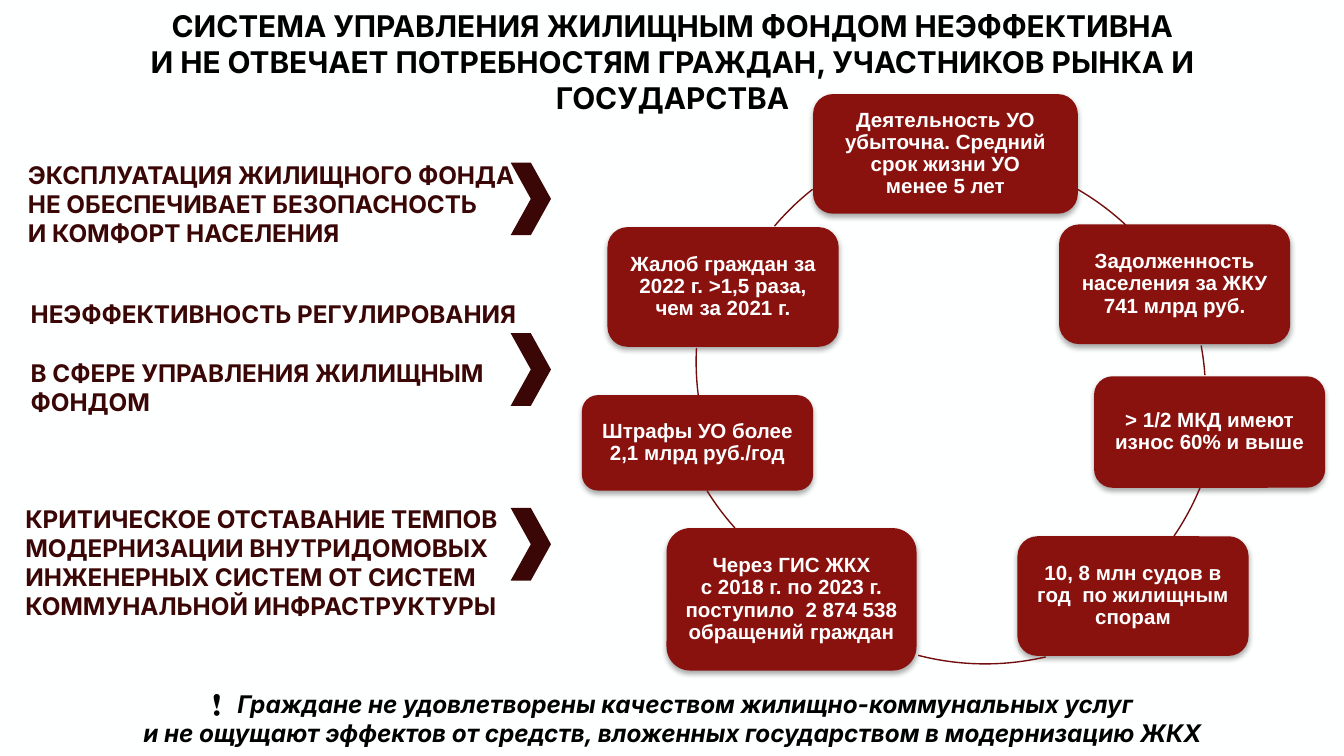
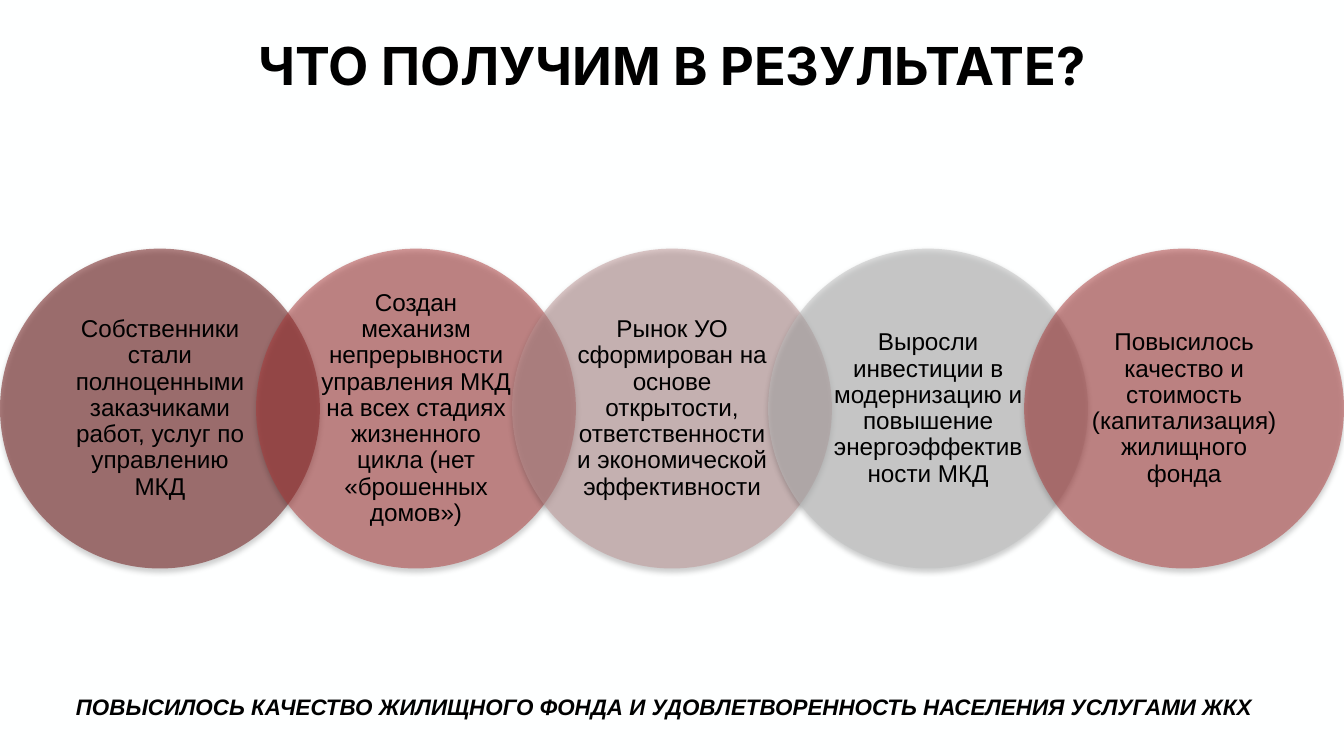
"""Build two slides on housing management: its problems and the expected results."""
from lxml.etree import SubElement
from pptx import Presentation
from pptx.dml.color import RGBColor
from pptx.enum.shapes import MSO_SHAPE
from pptx.enum.text import MSO_ANCHOR, PP_ALIGN
from pptx.oxml.ns import qn
from pptx.util import Inches, Pt

COLS, ROWS = 100, 56.25
CELL = Inches(10) / COLS
INK = {
    "back": "FEFFFF", "text": "000000", "white": "FFFFFF", "dark": "3A0606",
    "node": "89120E", "arc": "740D0D", "wine": "690C0C", "red": "AC3737",
    "rose": "BD9494", "grey": "BFBFBF",
}
ALIGN = {"l": PP_ALIGN.LEFT, "c": PP_ALIGN.CENTER}
ANCHOR = {"t": MSO_ANCHOR.TOP, "m": MSO_ANCHOR.MIDDLE, "b": MSO_ANCHOR.BOTTOM}

CLAIMS = [
    ((1.1, 10.1, 43.7, 9.3), 12.1,
     ["ЭКСПЛУАТАЦИЯ ЖИЛИЩНОГО ФОНДА\nНЕ ОБЕСПЕЧИВАЕТ БЕЗОПАСНОСТЬ\nИ КОМФОРТ НАСЕЛЕНИЯ"]),
    ((1.3, 23, 38.9, 9), 24.8,
     ["НЕЭФФЕКТИВНОСТЬ РЕГУЛИРОВАНИЯ", "В СФЕРЕ УПРАВЛЕНИЯ ЖИЛИЩНЫМ ФОНДОМ"]),
    ((0.9, 36.6, 45.9, 10.6), 37.8,
     ["КРИТИЧЕСКОЕ ОТСТАВАНИЕ ТЕМПОВ МОДЕРНИЗАЦИИ ВНУТРИДОМОВЫХ "
      "ИНЖЕНЕРНЫХ СИСТЕМ ОТ СИСТЕМ КОММУНАЛЬНОЙ ИНФРАСТРУКТУРЫ"]),
]
NODES = [
    ((60.5, 7, 19.7, 8.9), "Деятельность УО убыточна. Средний срок жизни УО\nменее 5 лет"),
    ((78.8, 16.7, 17.2, 8.9), "Задолженность населения за ЖКУ 741 млрд руб."),
    ((81.4, 28, 17.2, 8.3), "> 1/2 МКД имеют износ 60% и выше"),
    ((75.7, 39.9, 17.2, 8.9), "10, 8 млн судов в год  по жилищным спорам"),
    ((49.6, 39.3, 18.6, 10.6),
     "Через ГИС ЖКХ\nс 2018 г. по 2023 г. поступило  2 874 538 обращений граждан"),
    ((43.3, 29.4, 17.2, 7.1), "Штрафы УО более 2,1 млрд руб./год"),
    ((45.2, 16.9, 17.2, 8.9), "Жалоб граждан за 2022 г. >1,5 раза, чем за 2021 г."),
]
ARCS = [
    (50.3, 11.4, 300.2, 313), (49.9, 9.4, 349.6, 356), (51, 8.8, 22.3, 34.2),
    (53.4, 9.6, 76.9, 104.5), (49.6, 6.1, 138.1, 148.1),
    (51.8, 7, 172.8, 182.9), (52.9, 9.8, 220.3, 231.7),
]
GOALS = [
    ("wine", "Собственники стали полноценными заказчиками работ, услуг по управлению МКД"),
    ("red", "Создан механизм непрерывности управления МКД на всех стадиях "
            "жизненного цикла (нет «брошенных домов»)"),
    ("rose", "Рынок УО сформирован на основе открытости, ответственности "
             "и экономической эффективности"),
    ("grey", "Выросли инвестиции в модернизацию и повышение энергоэффективности МКД"),
    ("red", "Повысилось качество и стоимость (капитализация) жилищного фонда"),
]


def rgb(name):
    """Return the named colour."""
    return RGBColor.from_string(INK[name])


def span(*cells):
    """Turn grid cells into slide lengths."""
    return [round(n * CELL) for n in cells]


def write(shape, paras, size=13, font="Inter", ink="text", bold=True, slant=False,
          align="c", anchor="t", pad=(1, 1), lead=None, gap=0):
    """Fill a shape with formatted paragraphs; a newline is a line break."""
    frame = shape.text_frame
    frame.word_wrap = True
    frame.vertical_anchor = ANCHOR[anchor]
    side, edge = span(*pad)
    frame.margin_left = frame.margin_right = side
    frame.margin_top = frame.margin_bottom = edge
    for i, text in enumerate(paras):
        para = frame.add_paragraph() if i else frame.paragraphs[0]
        para.alignment = ALIGN[align]
        para.space_before = Pt(gap if i else 0)
        if lead:
            para.line_spacing = lead
        for j, line in enumerate(text.split("\n")):
            if j:
                para.add_line_break()
            run = para.add_run()
            run.text = line
            run.font.size, run.font.name = Pt(size), font
            run.font.bold, run.font.italic = bold, slant
            run.font.color.rgb = rgb(ink)
    return frame


def label(slide, box, paras, **form):
    """Add a text box on the grid."""
    return write(slide.shapes.add_textbox(*span(*box)), paras, **form)


def block(slide, kind, box, ink):
    """Add a plain filled shape without outline."""
    shape = slide.shapes.add_shape(kind, *span(*box))
    shape.shadow.inherit = False
    shape.fill.solid()
    shape.fill.fore_color.rgb = rgb(ink)
    shape.line.fill.background()
    return shape


def shade(shape, drop, alpha):
    """Give a shape a soft shadow below it."""
    effect = shape._element.spPr.find(qn("a:effectLst"))
    outer = SubElement(effect, qn("a:outerShdw"), blurRad=str(Pt(3.1)),
                       dist=str(Pt(drop)), dir="5400000", rotWithShape="0")
    tint = SubElement(outer, qn("a:srgbClr"), val=INK["text"])
    SubElement(tint, qn("a:alpha"), val=str(alpha * 1000))


def node(slide, box, text):
    """Add a box of the ring."""
    shape = block(slide, MSO_SHAPE.ROUNDED_RECTANGLE, box, "node")
    shade(shape, 1.8, 35)
    write(shape, [text], size=11, font="Arial", ink="white", anchor="m",
          pad=(0.5, 0.5), lead=0.9)


def arc(slide, left, top, start, end):
    """Add a link of the ring, with angles in degrees."""
    shape = slide.shapes.add_shape(MSO_SHAPE.ARC, *span(left, top, 39.8, 39.8))
    shape.shadow.inherit = False
    shape.fill.background()
    shape.line.color.rgb = rgb("arc")
    shape.line.width = Pt(0.75)
    for i, angle in enumerate((start, end)):
        shape.adjustments[i] = angle * 0.6


def disc(slide, left, top, wide, ink, text):
    """Add a half transparent circle with text over it."""
    shape = block(slide, MSO_SHAPE.OVAL, (left, top, wide, wide), ink)
    tint = shape._element.spPr.find(qn("a:solidFill"))[0]
    SubElement(tint, qn("a:alpha"), val="50000")
    shade(shape, 1.6, 38)
    inset = 3.5
    side = wide - 2 * inset
    label(slide, (left + inset, top + inset, side, side), [text], font="Arial",
          bold=False, anchor="m", pad=(1.3, 0.2), lead=0.9)


def mark(para, sign):
    """Put a bullet sign before a paragraph."""
    props = para._p.get_or_add_pPr()
    props.set("marL", str(span(1.9)[0]))
    props.set("indent", str(span(-1.9)[0]))
    tint = SubElement(props, qn("a:buClr"))
    SubElement(tint, qn("a:srgbClr"), val=INK["text"])
    SubElement(props, qn("a:buFont"), typeface="Arial")
    SubElement(props, qn("a:buChar"), char=sign)


def page(deck, box, title, size):
    """Add a slide with its background and title."""
    slide = deck.slides.add_slide(deck.slide_layouts[6])
    slide.background.fill.solid()
    slide.background.fill.fore_color.rgb = rgb("back")
    label(slide, box, [title], size=size)
    return slide


def issues(deck):
    """Build the slide of problems."""
    slide = page(deck, (1.8, -0.4, 96.5, 8.7),
                 "СИСТЕМА УПРАВЛЕНИЯ ЖИЛИЩНЫМ ФОНДОМ НЕЭФФЕКТИВНА\n"
                 "И НЕ ОТВЕЧАЕТ ПОТРЕБНОСТЯМ ГРАЖДАН, УЧАСТНИКОВ РЫНКА И ГОСУДАРСТВА", 16)
    for box, top, paras in CLAIMS:
        label(slide, box, paras, ink="dark", align="l", anchor="b", gap=16)
        block(slide, MSO_SHAPE.CHEVRON, (38, top, 3, 5.4), "dark")
    for item in NODES:
        node(slide, *item)
    for item in ARCS:
        arc(slide, *item)
    foot = label(slide, (0, 50.3, COLS, 5.4),
                 ["Граждане не удовлетворены качеством жилищно-коммунальных услуг",
                  "и не ощущают эффектов от средств, вложенных государством в модернизацию ЖКХ"],
                 slant=True)
    mark(foot.paragraphs[0], "❗️")


def results(deck):
    """Build the slide of results."""
    slide = page(deck, (7.9, 1.5, 84.2, 6.3), "ЧТО ПОЛУЧИМ В РЕЗУЛЬТАТЕ?", 28)
    wide = 23.8
    step = (COLS - wide) / (len(GOALS) - 1)
    for i, (ink, text) in enumerate(GOALS):
        disc(slide, i * step, 18.5, wide, ink, text)
    label(slide, (3.5, 50.5, 91.9, 4.1),
          ["ПОВЫСИЛОСЬ КАЧЕСТВО ЖИЛИЩНОГО ФОНДА И УДОВЛЕТВОРЕННОСТЬ НАСЕЛЕНИЯ УСЛУГАМИ ЖКХ"],
          size=12, font="Arial", slant=True, anchor="b")


def main():
    """Make and save the deck."""
    deck = Presentation()
    deck.slide_width, deck.slide_height = span(COLS, ROWS)
    issues(deck)
    results(deck)
    deck.save("out.pptx")


if __name__ == "__main__":
    main()
